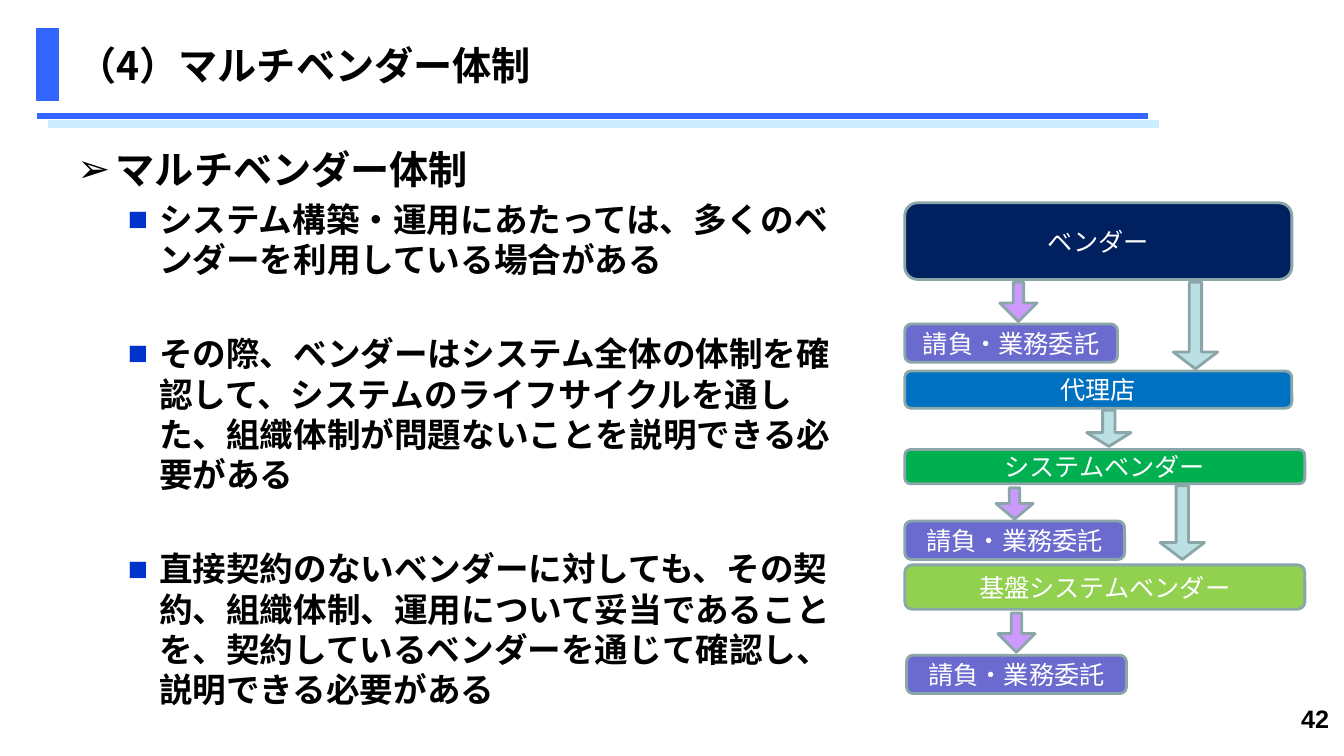
from pptx import Presentation
from pptx.dml.color import RGBColor
from pptx.enum.shapes import MSO_CONNECTOR as Connector, MSO_SHAPE as Shape
from pptx.enum.text import MSO_ANCHOR as Anchor, PP_ALIGN as Align
from pptx.oxml.ns import qn
from pptx.util import Pt
from lxml.etree import SubElement

JAPANESE = "Noto Sans CJK JP"
BLACK = RGBColor(0x00, 0x00, 0x00)
WHITE = RGBColor(0xFF, 0xFF, 0xFF)
BLUE = RGBColor(0x33, 0x66, 0xFF)
PALE_BLUE = RGBColor(0xCC, 0xEC, 0xFF)
BULLET_BLUE = RGBColor(0x00, 0x33, 0xCC)
NAVY = RGBColor(0x00, 0x20, 0x60)
AGENCY_BLUE = RGBColor(0x00, 0x70, 0xC0)
GREEN = RGBColor(0x00, 0xB0, 0x50)
LIME = RGBColor(0x92, 0xD0, 0x50)
VIOLET = RGBColor(0x6B, 0x6B, 0xCF)
LILAC = RGBColor(0xCC, 0x99, 0xFF)
AQUA = RGBColor(0xBB, 0xE0, 0xE3)
OUTLINE = RGBColor(0x8A, 0xA6, 0xA8)


def write(para, text, size=18, color=BLACK, bold=False, font=JAPANESE, align=Align.LEFT):
    para.alignment = align
    span = para.add_run()
    span.text = text
    span.font.size = Pt(size)
    span.font.bold = bold
    span.font.color.rgb = color
    span.font.name = font
    SubElement(span.font._element, qn("a:ea")).set("typeface", font)


def add_block(kind, left, top, width, height, fill, line, weight):
    block = page.shapes.add_shape(kind, Pt(left), Pt(top), Pt(width), Pt(height))
    block.shadow.inherit = False
    block.fill.solid()
    block.fill.fore_color.rgb = fill
    block.line.color.rgb = line
    block.line.width = Pt(weight)
    return block


deck = Presentation()
deck.slide_width, deck.slide_height = Pt(960), Pt(540)
page = deck.slides.add_slide(deck.slide_layouts[6])

for left, right, y, color, weight in [
    (26.6, 820, 82.8, BLUE, 4.5),
    (34, 828, 88.6, PALE_BLUE, 6),
]:
    rule = page.shapes.add_connector(Connector.STRAIGHT, Pt(left), Pt(y), Pt(right), Pt(y))
    rule.line.color.rgb = color
    rule.line.width = Pt(weight)
    SubElement(rule._element.spPr, qn("a:effectLst"))

add_block(Shape.RECTANGLE, 26.3, 20.2, 15.3, 51.4, BLUE, BLUE, 0.75)

title = page.shapes.add_textbox(Pt(48.2), Pt(15.1), Pt(864), Pt(62.6)).text_frame
title.word_wrap = True
title.vertical_anchor = Anchor.MIDDLE
write(title.paragraphs[0], "（4）マルチベンダー体制", size=28, bold=True)

body = page.shapes.add_textbox(Pt(48.2), Pt(100.1), Pt(572.4), Pt(408.2)).text_frame
body.word_wrap = True
for index, (text, size, level, margin, hanging, before, bullet, bullet_color) in enumerate([
    ("マルチベンダー体制", 28, 0, 27.4, 27.4, 0, "➢", BLACK),
    ("システム構築・運用にあたっては、多くのベンダーを利用している場合がある",
     24, 1, 58.3, 22.3, 4.8, "■", BULLET_BLUE),
    ("その際、ベンダーはシステム全体の体制を確認して、システムのライフサイクルを通した、"
     "組織体制が問題ないことを説明できる必要がある",
     24, 1, 58.3, 22.3, 38.4, "■", BULLET_BLUE),
    ("直接契約のないベンダーに対しても、その契約、組織体制、運用について妥当であることを、"
     "契約しているベンダーを通じて確認し、説明できる必要がある",
     24, 1, 58.3, 22.3, 38.4, "■", BULLET_BLUE),
]):
    para = body.paragraphs[0] if index == 0 else body.add_paragraph()
    para.level = level
    para.space_before = Pt(before)
    layout = para._p.get_or_add_pPr()
    layout.set("marL", str(Pt(margin)))
    layout.set("indent", str(-Pt(hanging)))
    layout.set("hangingPunct", "0")
    SubElement(SubElement(layout, qn("a:buClr")), qn("a:srgbClr")).set("val", str(bullet_color))
    SubElement(layout, qn("a:buFont")).set("typeface", "Arial")
    SubElement(layout, qn("a:buChar")).set("char", bullet)
    write(para, text, size=size, bold=True)

number = page.shapes.add_textbox(Pt(864.3), Pt(499), Pt(92.2), Pt(37.4)).text_frame
number.word_wrap = True
write(number.paragraphs[0], "42", bold=True, font="Arial", align=Align.RIGHT)

for text, left, top, width, height, fill in [
    ("ベンダー", 646.3, 144.9, 276.5, 54.7, NAVY),
    ("代理店", 646.3, 265, 276.5, 26.6, AGENCY_BLUE),
    ("システムベンダー", 646.3, 321.1, 285.8, 24.5, GREEN),
    ("基盤システムベンダー", 646.3, 403.5, 285.8, 31.7, LIME),
    ("請負・業務委託", 646.3, 231.4, 151.9, 27.4, VIOLET),
    ("請負・業務委託", 646.3, 372.2, 157, 27.4, VIOLET),
    ("請負・業務委託", 647.6, 468, 157, 27.4, VIOLET),
]:
    box = add_block(Shape.ROUNDED_RECTANGLE, left, top, width, height, fill, OUTLINE, 2)
    frame = box.text_frame
    frame.word_wrap = True
    frame.vertical_anchor = Anchor.MIDDLE
    frame.margin_top = frame.margin_bottom = 0
    write(frame.paragraphs[0], text, color=WHITE, align=Align.CENTER)

for left, top, width, height, fill, head in [
    (714.2, 201.6, 26.6, 28.1, LILAC, 0.5),
    (711.4, 348.5, 26.6, 22.3, LILAC, 0.5),
    (712.8, 437.8, 26.6, 28.1, LILAC, 0.5),
    (838.1, 201.6, 31.7, 61.9, AQUA, 0.38),
    (776.2, 293, 31.7, 25.9, AQUA, 0.38),
    (828.7, 347, 31.7, 52.6, AQUA, 0.38),
]:
    arrow = add_block(Shape.DOWN_ARROW, left, top, width, height, fill, OUTLINE, 2)
    arrow.adjustments[0] = 0.28
    arrow.adjustments[1] = head

deck.save("out.pptx")
